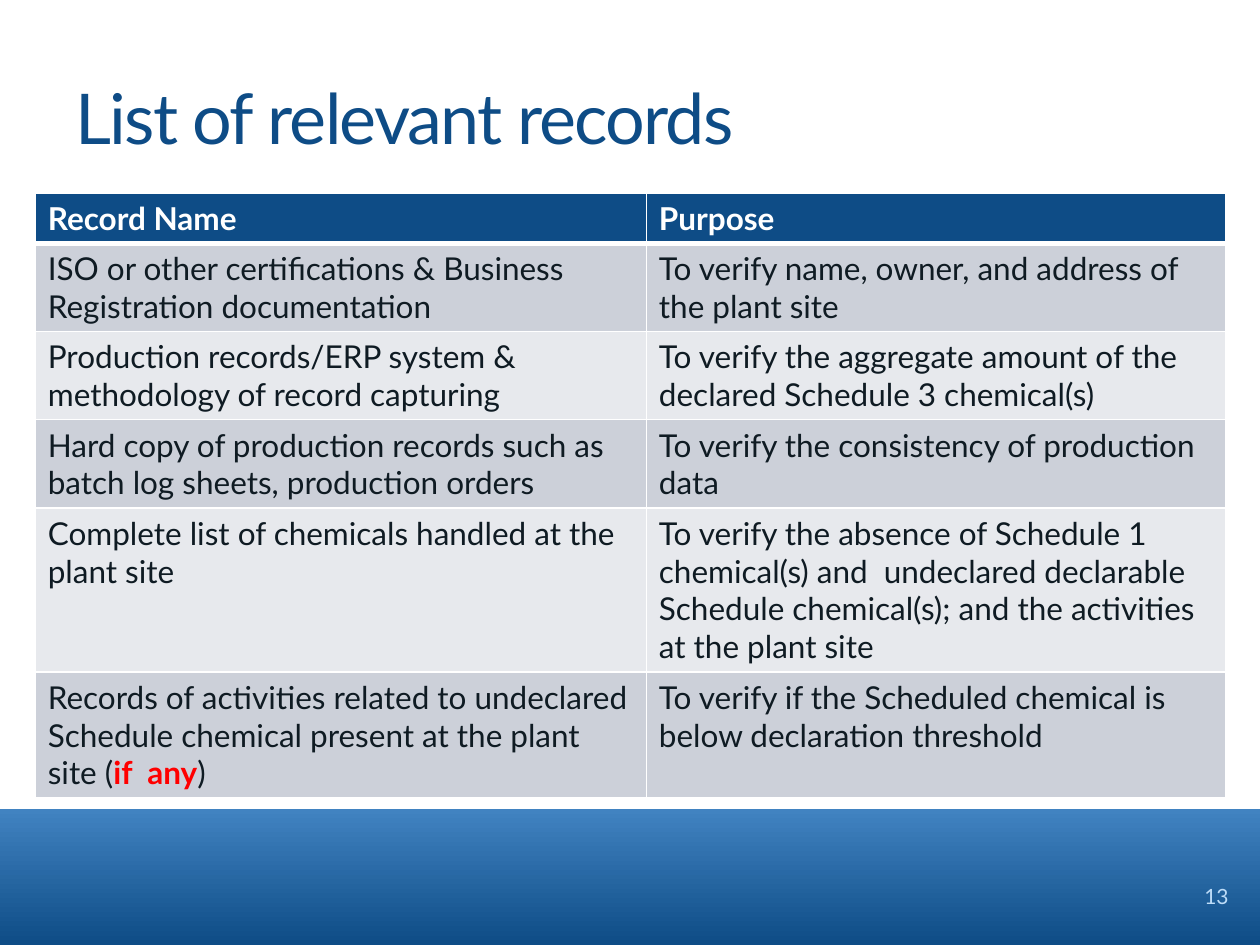
from lxml.etree import SubElement
from pptx import Presentation
from pptx.dml.color import RGBColor
from pptx.enum.shapes import MSO_SHAPE
from pptx.enum.text import MSO_ANCHOR, PP_ALIGN
from pptx.oxml import parse_xml
from pptx.oxml.ns import nsdecls
from pptx.util import Inches, Pt

COLORS = {
    "navy": "0E4C86", "blue": "4183C1", "pale": "BDDCF8", "ink": "0F1B23",
    "white": "FFFFFF", "band": "CCD0D9", "light": "E7E9ED", "red": "FF0000",
}
FORMATS = {
    "title": ({"name": "Lato", "size": Pt(40), "bold": False}, "navy"),
    "head": ({"name": "Lato", "size": Pt(18), "bold": True}, "white"),
    "cell": ({"name": "Lato", "size": Pt(18), "bold": False}, "ink"),
    "alert": ({"name": "Lato", "size": Pt(18), "bold": True}, "red"),
    "number": ({"name": "Lato", "size": Pt(12), "bold": False}, "pale"),
}
RECORDS = [
    (1, "Record Name", "Purpose"),
    (2, "ISO or other certifications & Business Registration documentation",
     "To verify name, owner, and address of the plant site"),
    (2, "Production records/ERP system & methodology of record capturing",
     "To verify the aggregate amount of the declared Schedule 3 chemical(s)"),
    (2, "Hard copy of production records such as batch log sheets, production orders",
     "To verify the consistency of production data"),
    (4, "Complete list of chemicals handled at the plant site",
     "To verify the absence of Schedule 1 chemical(s) and  undeclared declarable "
     "Schedule chemical(s); and the activities at the plant site"),
    (3, [("Records of activities related to undeclared Schedule chemical present "
          "at the plant site (", "cell"), ("if  any", "alert"), (")", "cell")],
     "To verify if the Scheduled chemical is below declaration threshold"),
]


def color(name):
    return RGBColor.from_string(COLORS[name])


class Slide:
    """Holds the style and the current slide, measured in a 100 by 75 grid."""

    def __init__(self, deck):
        deck.slide_width, deck.slide_height = Inches(10), Inches(7.5)
        self.unit = deck.slide_width / 100
        self.page = deck.slides.add_slide(deck.slide_layouts[5])

    def grid(self, *cells):
        return [round(cell * self.unit) for cell in cells]

    def add_spans(self, frame, spans, align=PP_ALIGN.LEFT):
        para = frame.paragraphs[0]
        para.alignment = align
        for text, style in spans:
            span = para.add_run()
            span.text = text
            values, ink = FORMATS[style]
            for key, value in values.items():
                setattr(span.font, key, value)
            span.font.color.rgb = color(ink)
        return para

    def title(self, text, *area):
        box = self.page.shapes.title
        for key, value in zip(("left", "top", "width", "height"), self.grid(*area)):
            setattr(box, key, value)
        box.text_frame.vertical_anchor = MSO_ANCHOR.MIDDLE
        para = self.add_spans(box.text_frame, [(text, "title")])
        para.runs[0].font._element.set("spc", "-100")

    def gradient_band(self, *area):
        box = self.page.shapes.add_shape(MSO_SHAPE.RECTANGLE, *self.grid(*area))
        box.shadow.inherit = False
        box.line.fill.background()
        box.fill.gradient()
        box.fill.gradient_angle = 270
        for stop, name, position in zip(box.fill.gradient_stops, ("blue", "navy"), (0, 1)):
            stop.color.rgb = color(name)
            stop.position = position

    def number(self, text, *area):
        frame = self.page.shapes.add_textbox(*self.grid(*area)).text_frame
        frame.word_wrap = True
        frame.vertical_anchor = MSO_ANCHOR.MIDDLE
        self.add_spans(frame, [(text, "number")], PP_ALIGN.RIGHT)

    def borders(self, cell, widths):
        properties = cell._tc.get_or_add_tcPr()
        for index, (side, width) in enumerate(widths.items()):
            line = parse_xml(f'<a:ln{side} {nsdecls("a")} w="{Pt(width)}"/>')
            fill = SubElement(line, f"{{{line.nsmap['a']}}}solidFill")
            SubElement(fill, f"{{{line.nsmap['a']}}}srgbClr", val=COLORS["white"])
            properties.insert(index, line)

    def table(self, records, left, top, widths):
        heights = [1 + 3 * lines for lines, *_ in records]
        area = self.grid(left, top, sum(widths), sum(heights))
        table = self.page.shapes.add_table(len(records), len(widths), *area).table
        for column, width in zip(table.columns, self.grid(*widths)):
            column.width = width
        for row, height in zip(table.rows, self.grid(*heights)):
            row.height = height
        for index, (_, *texts) in enumerate(records):
            style = "cell" if index else "head"
            fill = ("light" if index % 2 == 0 else "band") if index else "navy"
            for cell, content in zip(table.rows[index].cells, texts):
                cell.fill.solid()
                cell.fill.fore_color.rgb = color(fill)
                top_width = 3 if index == 1 else 1
                bottom_width = 1 if index else 3
                self.borders(cell, {"L": 1, "R": 1, "T": top_width, "B": bottom_width})
                spans = [(content, style)] if isinstance(content, str) else content
                self.add_spans(cell.text_frame, spans)


def main():
    deck = Presentation()
    slide = Slide(deck)
    slide.gradient_band(0, 64.2, 100, 10.8)
    slide.number("13", 90.2, 69.4, 8.3, 3.5)
    slide.title("List of relevant records", 5, 3, 89, 12.5)
    slide.table(RECORDS, 2.8, 15.3, (48.5, 46))
    deck.save("out.pptx")


if __name__ == "__main__":
    main()
